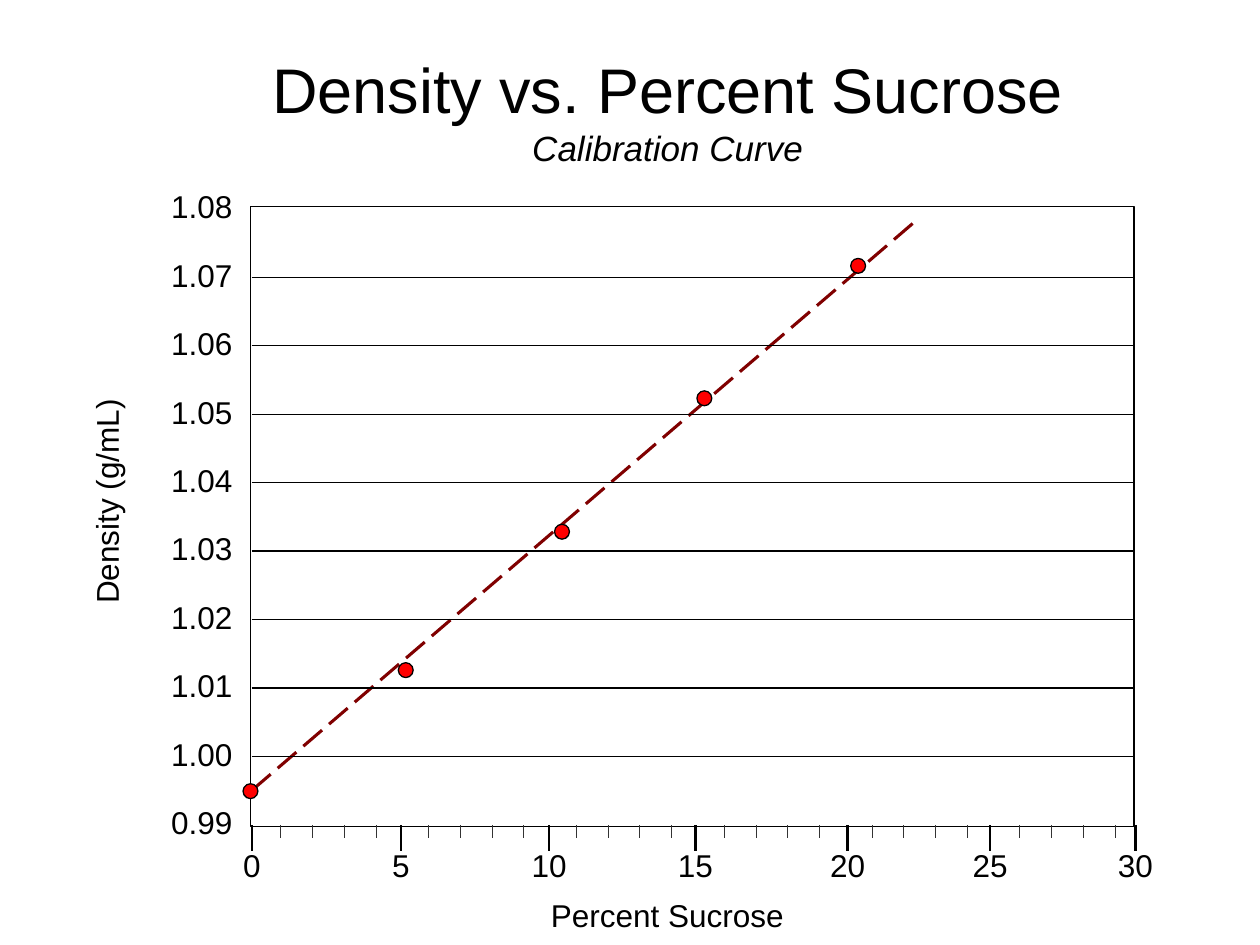
from pptx import Presentation
from pptx.dml.color import RGBColor
from pptx.enum.dml import MSO_LINE
from pptx.enum.shapes import MSO_CONNECTOR, MSO_SHAPE
from pptx.enum.text import MSO_ANCHOR, MSO_AUTO_SIZE, PP_ALIGN
from pptx.oxml.ns import qn
from pptx.util import Cm, Pt
from lxml import etree


def write(text, sp=None, box=None, size=18, italic=False, color="000000", align=PP_ALIGN.CENTER):
    if sp is None:
        sp = s.shapes.add_textbox(*map(Cm, box))
        p = sp.text_frame.paragraphs[0]
    else:
        tf = sp.text_frame
        p = tf.add_paragraph() if tf.text else tf.paragraphs[0]
    sp.text_frame.word_wrap = False
    p.alignment = align
    r = p.add_run()
    r.text = text
    r.font.name = "Arial"
    r.font.size = Pt(size)
    r.font.italic = italic
    r.font.color.rgb = RGBColor.from_string(color)
    return sp


def line(x1, y1, x2, y2, color="000000", width=0.75):
    c = s.shapes.add_connector(MSO_CONNECTOR.STRAIGHT, Cm(x1), Cm(y1), Cm(x2), Cm(y2))
    c.line.color.rgb = RGBColor.from_string(color)
    c.line.width = Pt(width)
    etree.SubElement(c._element.spPr, qn("a:effectLst"))
    return c


prs = Presentation()
prs.slide_width, prs.slide_height = Cm(25.4), Cm(19.05)
s = prs.slides.add_slide(prs.slide_layouts[5])

title = s.shapes.title
title.left, title.top, title.width, title.height = Cm(5.23), Cm(0.89), Cm(16.46), Cm(2.62)
title.text_frame.auto_size = MSO_AUTO_SIZE.NONE
title.text_frame.vertical_anchor = MSO_ANCHOR.TOP
write("Density vs. Percent Sucrose", sp=title, size=36)
write("Calibration Curve", sp=title, size=20, italic=True)

trend = line(5.08, 15.93, 18.44, 4.47, color="800000", width=1.75)
trend.line.dash_style = MSO_LINE.LONG_DASH

frame = s.shapes.add_shape(MSO_SHAPE.RECTANGLE, Cm(5.05), Cm(4.17), Cm(17.81), Cm(12.5))
frame.shadow.inherit = False
frame.fill.background()
frame.line.color.rgb = RGBColor.from_string("000000")
frame.line.width = Pt(0.75)

for i in range(8):
    y = 5.59 + 1.38 * i
    line(5.07, y, 22.85, y)

for i in range(10):
    write(f"{1.08 - 0.01 * i:.2f}", box=(3.2, 3.65 + 1.38 * i, 1.75, 1.02), align=PP_ALIGN.LEFT)

major_ticks = [5.08, 8.08, 11.07, 14.02, 17.09, 19.96, 22.89]
for i, x in enumerate(major_ticks):
    line(x, 16.64, x, 17.15, width=1.5)
    write(str(5 * i), box=(x - 0.75, 16.94, 1.5, 1.02))

for group in range(6):
    for i in range(4):
        x = 5.66 + 2.98 * group + 0.64 * i
        line(x, 16.64, x, 16.89, color="333333", width=0.5)

y_title = write("Density (g/mL)", box=(-0.18, 9.6, 4.65, 1.02))
y_title.rotation = 270
write("Percent Sucrose", box=(10.85, 17.93, 5.21, 1.02))

points = [(5.05, 15.95), (8.18, 13.51), (11.33, 10.72), (14.2, 8.03), (17.3, 5.36)]
for x, y in points:
    dot = s.shapes.add_shape(MSO_SHAPE.OVAL, Cm(x - 0.15), Cm(y - 0.15), Cm(0.3), Cm(0.3))
    dot.shadow.inherit = False
    dot.fill.solid()
    dot.fill.fore_color.rgb = RGBColor.from_string("FF0000")
    dot.line.color.rgb = RGBColor.from_string("000000")
    dot.line.width = Pt(0.75)

prs.save("out.pptx")
